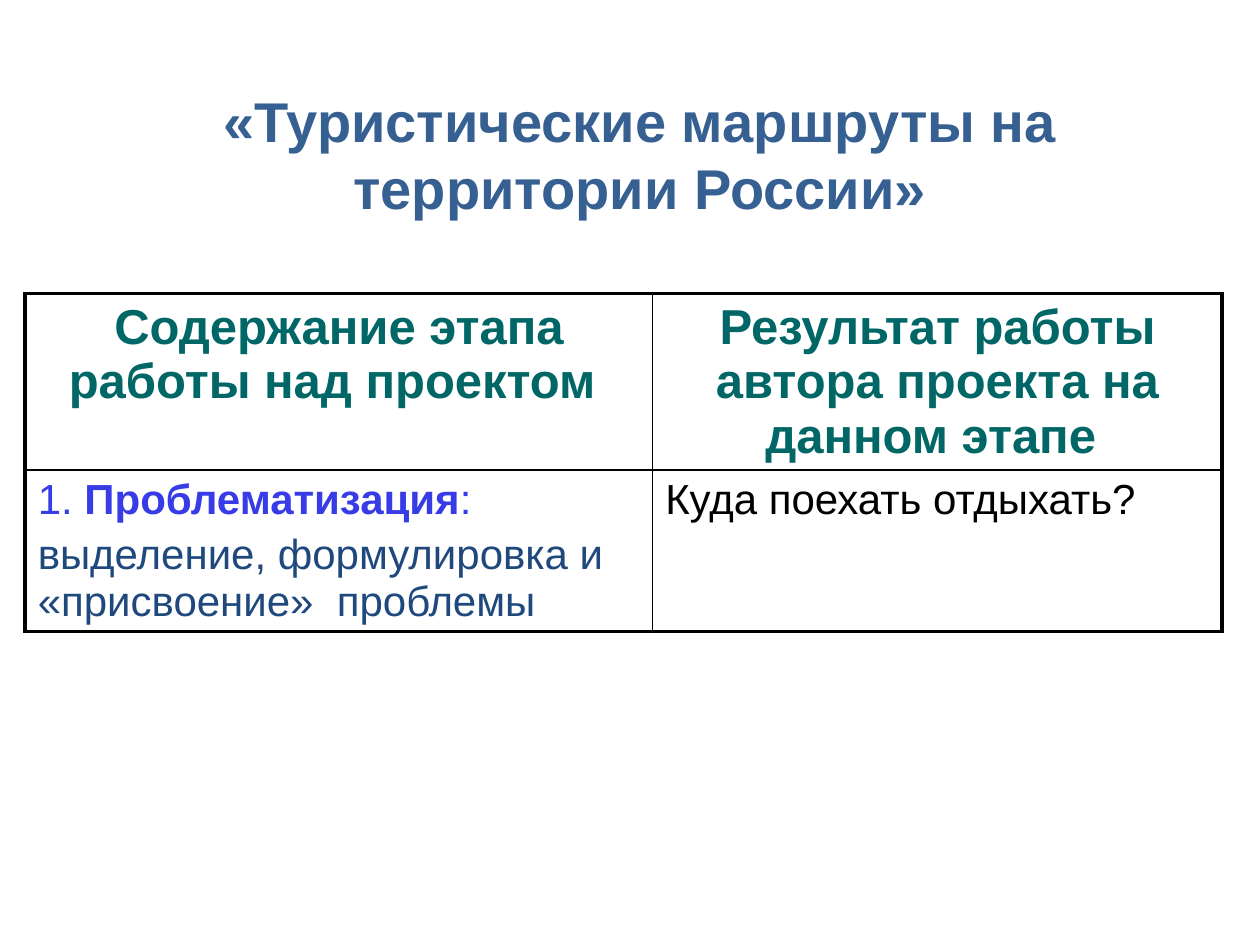
from lxml import etree
from pptx import Presentation, util as u
from pptx.dml.color import RGBColor
from pptx.enum import text as t
from pptx.oxml.ns import qn

TEAL, BLUE, NAVY, BLACK = "006666", "383CE6", "1F497D", "000000"
THICK, THIN = 2.25, 1
COLS, ROWS = (4.98, 4.52), (1.03, 1.24)
HEADS = ("Содержание этапа работы над проектом ",
         "Результат работы автора проекта на данном этапе ")
STAGE = [([("1. ", False), ("Проблематизация", True), (":", False)], BLUE),
         ([("выделение, формулировка и «присвоение»  проблемы", False)], NAVY)]
RESULT = [([("Куда поехать отдыхать?", False)], BLACK)]


def style(font, size, color, bold=None):
    font.name = "Arial"
    font.size = u.Pt(size)
    font.color.rgb = RGBColor.from_string(color)
    font.bold = bold


def place(shape, *box):
    shape.left, shape.top, shape.width, shape.height = map(u.Inches, box)


def add_title(slide, words):
    title = slide.shapes.title
    place(title, 0.33, 0.5, 9.5, 1.44)
    frame = title.text_frame
    frame.text = words
    frame.vertical_anchor = t.MSO_ANCHOR.MIDDLE
    para = frame.paragraphs[0]
    para.alignment = t.PP_ALIGN.CENTER
    style(para.font, 32, "376092", True)


def border(cell, row, col):
    props = cell._tc.get_or_add_tcPr()
    outer = {"L": col == 0, "R": col == len(COLS) - 1,
             "T": row == 0, "B": row == len(ROWS) - 1}
    for side, edge in outer.items():
        width = u.Pt(THICK if edge else THIN)
        line = etree.SubElement(props, qn(f"a:ln{side}"), w=str(int(width)))
        fill = etree.SubElement(line, qn("a:solidFill"))
        etree.SubElement(fill, qn("a:srgbClr"), val=BLACK)


def fill_cell(cell, paras, size, align):
    frame = cell.text_frame
    for i, (runs, color) in enumerate(paras):
        para = frame.add_paragraph() if i else frame.paragraphs[0]
        para.alignment = align
        para.space_before = u.Pt(size * 0.2)
        style(para.font, size, color)
        for words, bold in runs:
            run = para.add_run()
            run.text = words
            run.font.bold = bold


def add_grid(slide):
    box = map(u.Inches, (0.2, 2.33, sum(COLS), sum(ROWS)))
    grid = slide.shapes.add_table(len(ROWS), len(COLS), *box).table
    grid.first_row = grid.horz_banding = False
    for col, width in zip(grid.columns, COLS):
        col.width = u.Inches(width)
    for row, height in zip(grid.rows, ROWS):
        row.height = u.Inches(height)
    heads = [[([(words, True)], TEAL)] for words in HEADS]
    lines = ((heads, 28, t.PP_ALIGN.CENTER),
             ((STAGE, RESULT), 24, t.PP_ALIGN.LEFT))
    for r, (cells, size, align) in enumerate(lines):
        for c, paras in enumerate(cells):
            cell = grid.cell(r, c)
            border(cell, r, c)
            cell.fill.background()
            fill_cell(cell, paras, size, align)


def main():
    deck = Presentation()
    deck.slide_width, deck.slide_height = u.Inches(10), u.Inches(7.5)
    slide = deck.slides.add_slide(deck.slide_layouts[5])
    add_title(slide, "«Туристические маршруты на территории России»")
    add_grid(slide)
    deck.save("out.pptx")


if __name__ == "__main__":
    main()
